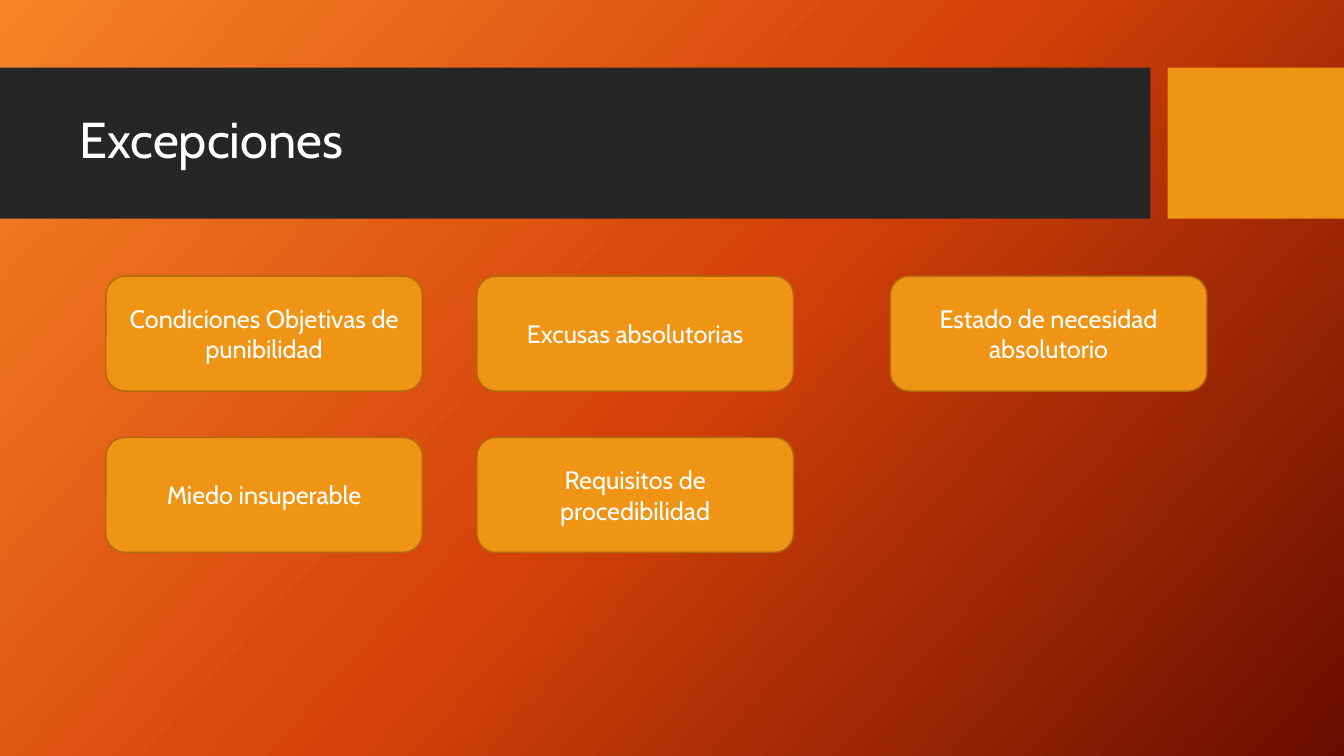
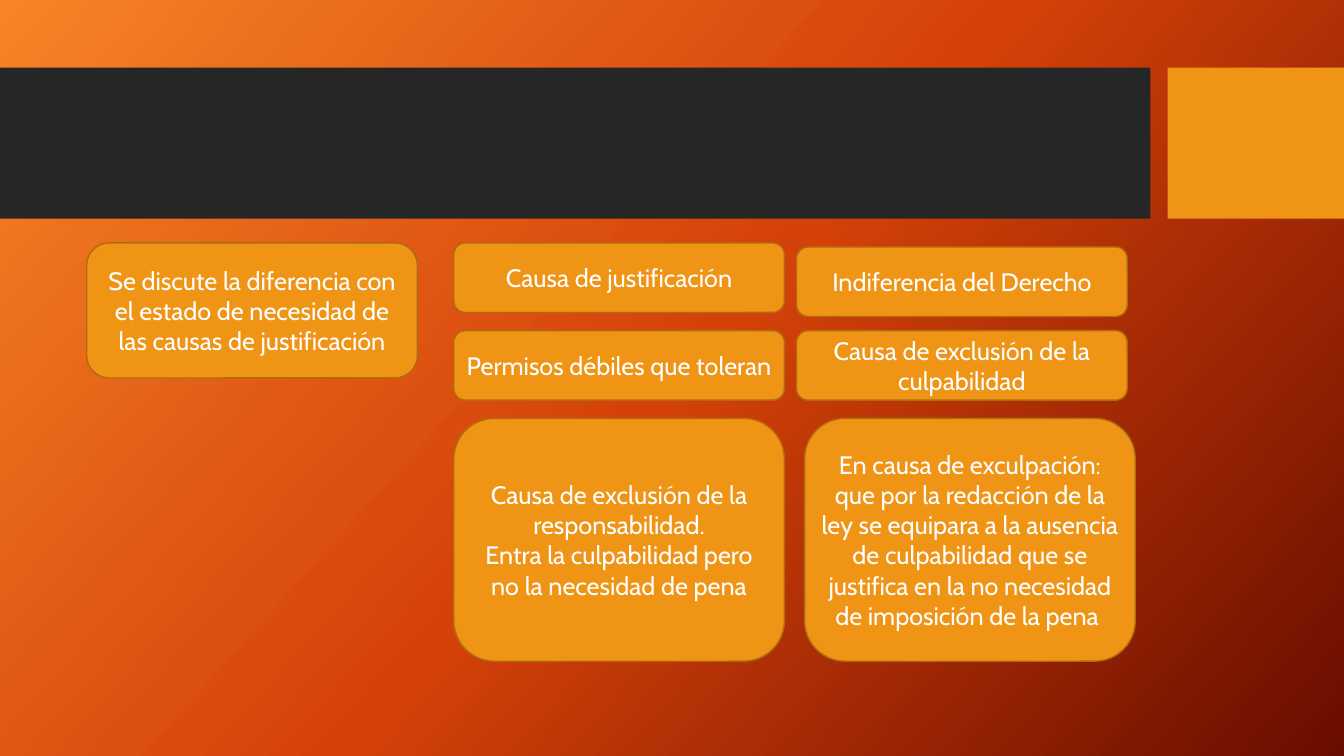
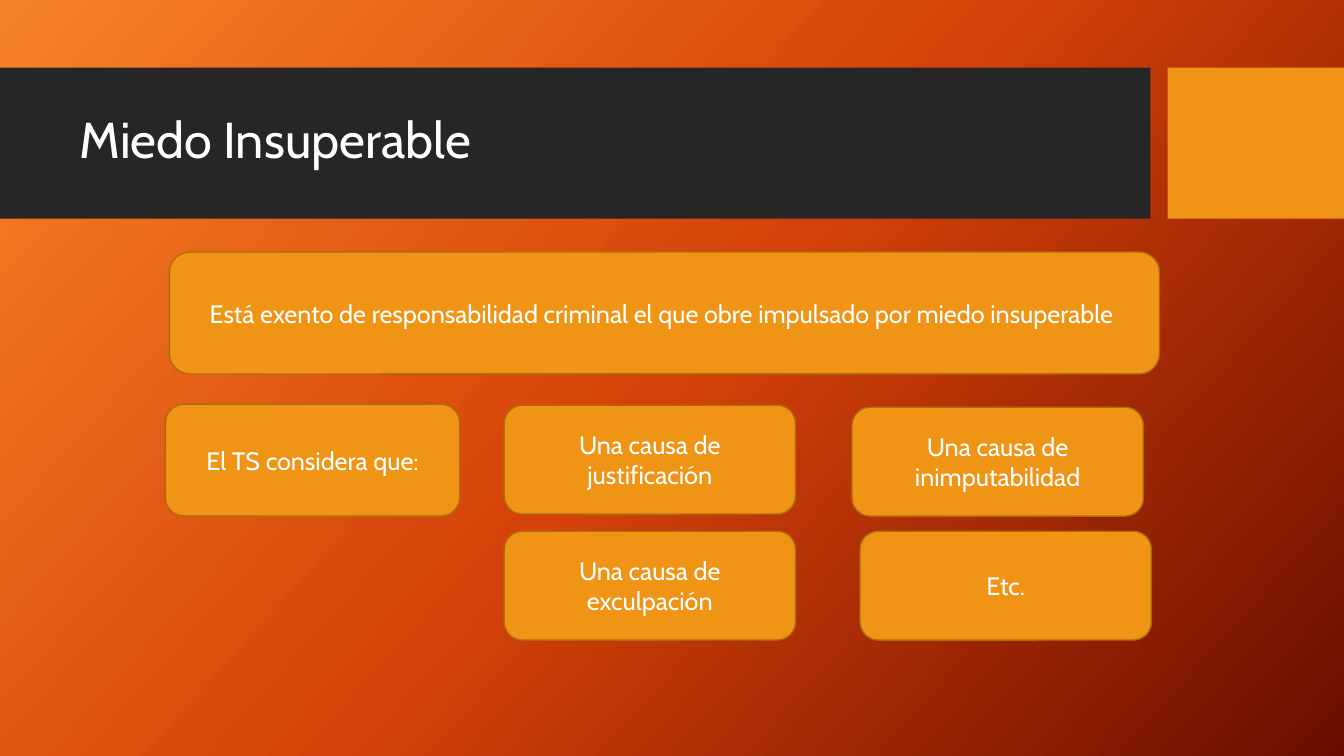
from copy import deepcopy

from pptx import Presentation
from pptx.dml.color import RGBColor
from pptx.enum import shapes as sh, text as tx
from pptx.oxml.ns import qn
from pptx.util import Inches, Pt

DARK = RGBColor(0x26, 0x26, 0x26)
AMBER = RGBColor(0xF0, 0x94, 0x15)
EDGE = RGBColor(0xAF, 0x6C, 0x0F)
WHITE = RGBColor(0xFF, 0xFF, 0xFF)
GLOW = [RGBColor(0xF6, 0x83, 0x27), RGBColor(0xD5, 0x42, 0x09), RGBColor(0x69, 0x0D, 0x00)]
FONT = "Cabin"
RECT, ROUND = sh.MSO_SHAPE.RECTANGLE, sh.MSO_SHAPE.ROUNDED_RECTANGLE

# Left, width
BANDS = [(0, 11.41, DARK), (11.58, 1.75, AMBER)]

# Slide 1: one box size on three columns and two rows
cols = [1.05, 4.73, 8.83]
names = ["Condiciones Objetivas de punibilidad", "Excusas absolutorias",
         "Estado de necesidad absolutorio", "Miedo insuperable",
         "Requisitos de procedibilidad"]
grid = [(cols[i % 3], 2.74 + 1.6 * (i // 3), 3.14, 1.14, name)
        for i, name in enumerate(names)]

# Title, then boxes as left, top, width, height, text
SLIDES = [
    ("Excepciones", grid),
    ("", [
        (0.86, 2.41, 3.28, 1.34, "Se discute la diferencia con el estado de necesidad "
                                 "de las causas de justificación"),
        (4.5, 2.41, 3.28, 0.69, "Causa de justificación"),
        (4.5, 3.28, 3.28, 0.69, "Permisos débiles que toleran"),
        (7.9, 2.45, 3.28, 0.69, "Indiferencia del Derecho"),
        (7.9, 3.28, 3.28, 0.69, "Causa de exclusión de la culpabilidad"),
        (4.5, 4.15, 3.28, 2.41, "Causa de exclusión de la responsabilidad.\n"
                                "Entra la culpabilidad pero no la necesidad de pena"),
        (7.98, 4.15, 3.28, 2.41, "En causa de exculpación: que por la redacción de la ley "
                                 "se equipara a la ausencia de culpabilidad que se justifica "
                                 "en la no necesidad de imposición de la pena "),
    ]),
    ("Miedo Insuperable", [
        (1.68, 2.5, 9.82, 1.21, "Está exento de responsabilidad criminal el que obre "
                                "impulsado por miedo insuperable "),
        (1.64, 4.01, 2.92, 1.11, "El TS considera que:"),
        (5, 4.02, 2.89, 1.08, "Una causa de justificación"),
        (8.45, 4.04, 2.89, 1.08, "Una causa de inimputabilidad"),
        (5, 5.27, 2.89, 1.08, "Una causa de exculpación"),
        (8.53, 5.27, 2.89, 1.08, "Etc."),
    ]),
]


def write(shape, words, size=18, align=tx.PP_ALIGN.CENTER, space=1.0):
    frame = shape.text_frame
    frame.word_wrap = True
    frame.vertical_anchor = tx.MSO_ANCHOR.MIDDLE
    frame.margin_left = frame.margin_right = Inches(0.05)
    frame.margin_top = frame.margin_bottom = Inches(0.05)
    frame.text = words
    for para in frame.paragraphs:
        para.alignment = align
        para.line_spacing = space
        para.font.size = Pt(size)
        para.font.name = FONT
        para.font.color.rgb = WHITE


def block(slide, kind, box, fill, edge=None):
    shape = slide.shapes.add_shape(kind, *map(Inches, box))
    shape.shadow.inherit = False
    shape.fill.solid()
    shape.fill.fore_color.rgb = fill
    if edge is None:
        shape.line.fill.background()
    else:
        shape.line.color.rgb = edge
        shape.line.width = Pt(1)
    return shape


prs = Presentation()
prs.slide_width, prs.slide_height = Inches(13.33), Inches(7.5)

# Every slide inherits the master's three-stop gradient
master = prs.slide_master
back = master.background.fill
back.gradient()
back.gradient_angle = 360 - 42
stops = master.element.find(".//" + qn("a:gsLst"))
stops.append(deepcopy(stops[0]))
for i, stop in enumerate(back.gradient_stops):
    stop.position = i / 2
    stop.color.rgb = GLOW[i]

for title, boxes in SLIDES:
    slide = prs.slides.add_slide(prs.slide_layouts[6])
    for left, width, fill in BANDS:
        block(slide, RECT, (left, 0.67, width, 1.5), fill)
    if title:
        head = slide.shapes.add_textbox(*map(Inches, (0.74, 0.82, 10.51, 1.18)))
        write(head, title, size=36, align=tx.PP_ALIGN.LEFT, space=0.9)
    for *box, words in boxes:
        write(block(slide, ROUND, box, AMBER, EDGE), words)

prs.save("out.pptx")
